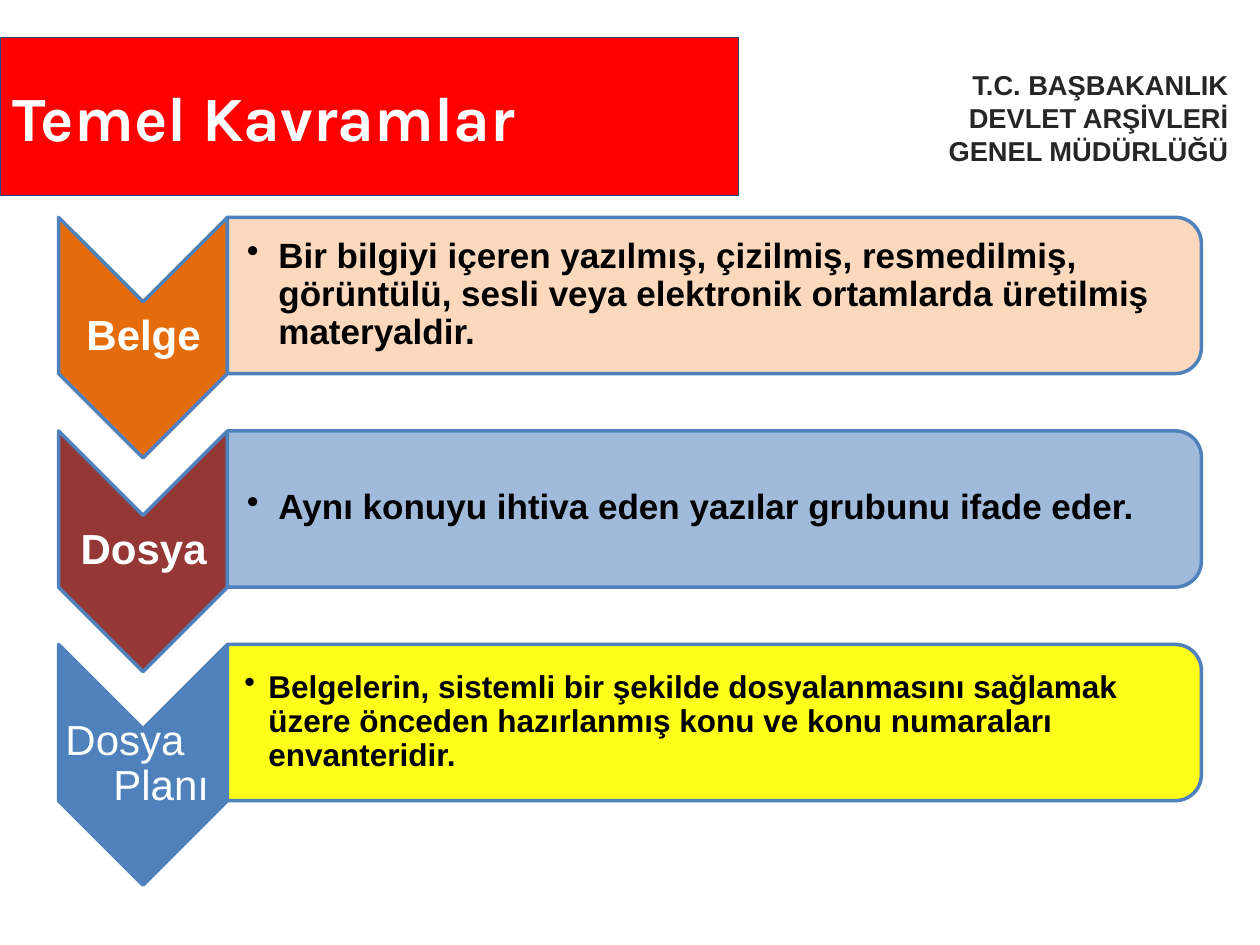
from lxml import etree
from pptx import Presentation
from pptx import util as u
from pptx.dml.color import RGBColor
from pptx.enum import shapes, text
from pptx.oxml.ns import qn

COLORS = {
    "red": "FF0000", "navy": "1F497D", "white": "FFFFFF", "ink": "262626", "black": "000000",
    "blue": "4F81BD", "orange": "E46C0A", "maroon": "953735",
    "peach": "FCD5B5", "sky": "95B3D7", "yellow": "FFFF00",
}


def paint(shape, fill, line, width):
    shape.shadow.inherit = False
    shape.fill.solid()
    shape.fill.fore_color.rgb = RGBColor.from_string(COLORS[fill])
    shape.line.color.rgb = RGBColor.from_string(COLORS[line])
    shape.line.width = u.Pt(width)


def write(frame, words, size, color, align, font="Arial", bold=True):
    frame.word_wrap = True
    frame.auto_size = text.MSO_AUTO_SIZE.NONE
    frame.vertical_anchor = text.MSO_ANCHOR.MIDDLE
    frame.text = words
    for para in frame.paragraphs:
        para.alignment = align
        para.font.name = font
        para.font.size = u.Pt(size)
        para.font.bold = bold
        para.font.color.rgb = RGBColor.from_string(COLORS[color])
    return frame.paragraphs[0]


deck = Presentation()
deck.slide_width, deck.slide_height = u.Inches(10), u.Inches(7.5)
page = deck.slides.add_slide(deck.slide_layouts[5])
LEFT, CENTER, RIGHT = text.PP_ALIGN.LEFT, text.PP_ALIGN.CENTER, text.PP_ALIGN.RIGHT

title = page.shapes.title
title.left, title.top = u.Inches(0), u.Inches(0.3)
title.width, title.height = u.Inches(5.86), u.Inches(1.25)
paint(title, "red", "navy", 0.75)
write(title.text_frame, "Temel Kavramlar", 36, "white", LEFT, "Karla")

agency = page.shapes.add_shape(
    shapes.MSO_SHAPE.RECTANGLE, u.Inches(6.02), u.Inches(0.31), u.Inches(3.83), u.Inches(1.25))
paint(agency, "white", "white", 0.75)
write(agency.text_frame, "T.C. BAŞBAKANLIK\nDEVLET ARŞİVLERİ\nGENEL MÜDÜRLÜĞÜ", 15.6, "ink", RIGHT)

concepts = [
    ("Belge", True, "orange", "peach", 20, 0.16, 0.25,
     "Bir bilgiyi içeren yazılmış, çizilmiş, resmedilmiş, görüntülü, sesli veya elektronik "
     "ortamlarda üretilmiş materyaldir."),
    ("Dosya", True, "maroon", "sky", 20, 0.16, 0.25,
     "Aynı konuyu ihtiva eden yazılar grubunu ifade eder."),
    ("Dosya Planı", False, "blue", "yellow", 18, 0.14, 0.19,
     "Belgelerin, sistemli bir şekilde dosyalanmasını sağlamak üzere önceden hazırlanmış konu "
     "ve konu numaraları envanteridir."),
]
PITCH = 1.695
for row, (name, bold, dark, light, size, inset, indent, meaning) in enumerate(concepts):
    top = 1.73 + row * PITCH

    chevron = page.shapes.add_shape(
        shapes.MSO_SHAPE.CHEVRON, u.Inches(0.18), u.Inches(top + 0.28), u.Inches(1.91), u.Inches(1.34))
    chevron.rotation = 90
    paint(chevron, dark, "blue", 2)

    label = page.shapes.add_textbox(
        u.Inches(0.47), u.Inches(top + 0.66), u.Inches(1.34), u.Inches(0.57))
    frame = label.text_frame
    frame.margin_left = frame.margin_right = frame.margin_top = frame.margin_bottom = u.Inches(0.02)
    para = write(frame, name, 24, "white", CENTER if bold else LEFT, bold=bold)
    para.line_spacing = 0.9
    if not bold:
        properties = para._p.get_or_add_pPr()
        properties.set("marL", str(u.Inches(0.41)))
        properties.set("indent", str(u.Inches(-0.38)))

    panel = page.shapes.add_shape(
        shapes.MSO_SHAPE.ROUND_2_SAME_RECTANGLE,
        u.Inches(5.05), u.Inches(top - 3.25), u.Inches(1.24), u.Inches(7.73))
    panel.rotation = 90
    paint(panel, light, "blue", 2)
    tint = panel.fill._xPr.find(qn("a:solidFill"))[0]
    etree.SubElement(tint, qn("a:alpha")).set("val", "90000")

    box = page.shapes.add_textbox(
        u.Inches(1.8), u.Inches(top + 0.05), u.Inches(7.67), u.Inches(1.12))
    frame = box.text_frame
    frame.margin_left = u.Inches(inset)
    frame.margin_right = frame.margin_top = frame.margin_bottom = u.Inches(0.01)
    para = write(frame, meaning, size, "black", LEFT)
    para.level = 1
    para.line_spacing = 0.9
    properties = para._p.get_or_add_pPr()
    properties.set("marL", str(u.Inches(indent)))
    properties.set("indent", str(u.Inches(-indent)))
    bullet = etree.Element(qn("a:buChar"))
    bullet.set("char", "•")
    properties.find(qn("a:lnSpc")).addnext(bullet)

deck.save("out.pptx")
